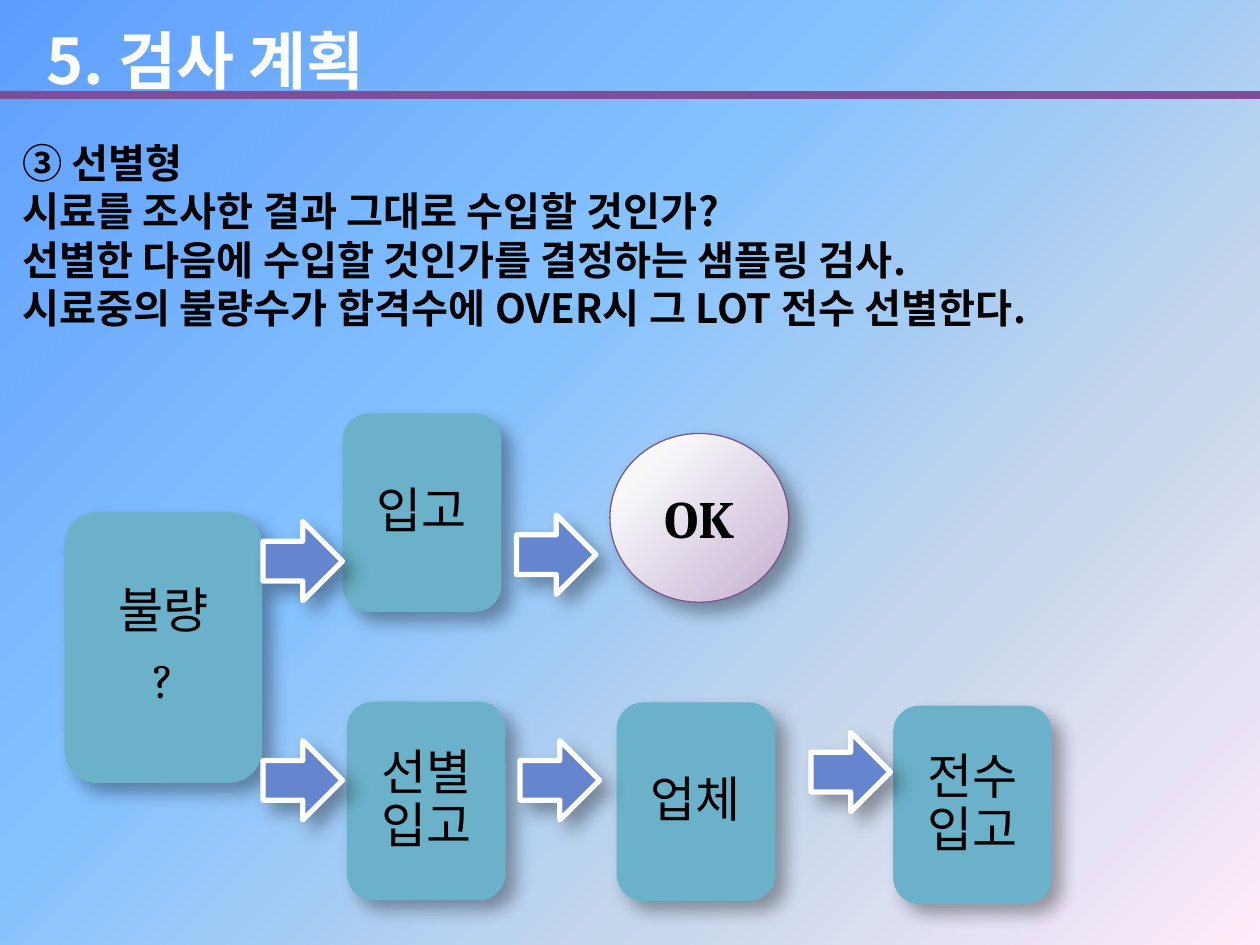
from dataclasses import dataclass

import pptx
import pptx.dml.color
import pptx.enum.shapes
import pptx.enum.text
import pptx.oxml
import pptx.oxml.ns
import pptx.util
from lxml import etree

Pt = pptx.util.Pt
ShapeKind = pptx.enum.shapes.MSO_SHAPE
NAMESPACE = pptx.oxml.ns.nsdecls("a")
SANS, SERIF = "Noto Sans CJK KR", "Cambria"
COLORS = {
    "title": "FFFFFF", "text": "000000", "rule": "7E4E99", "box": "6BB1C9",
    "arrow": "6585CF", "arrow_line": "FFFFFF", "circle_line": "77568A", "shadow": "000000",
}
BACKGROUND_STOPS = [(0, "5E9EFF"), (40, "85C2FF"), (70, "C4D6EB"), (100, "FFEBFA")]
CIRCLE_STOPS = [(20, "F8F7FA"), (100, "C5B0D2")]
LINEAR = '<a:lin ang="2700000" scaled="0"/>'
RADIAL = ('<a:path path="circle"><a:fillToRect l="-15000" t="-15000" '
          'r="115000" b="115000"/></a:path>')
BODY = [
    "③ 선별형",
    "시료를 조사한 결과 그대로 수입할 것인가?",
    "선별한 다음에 수입할 것인가를 결정하는 샘플링 검사.",
    "시료중의 불량수가 합격수에 OVER시 그 LOT 전수 선별한다.",
]


@dataclass
class Step:
    lines: list[str]
    left: float
    top: float
    width: float = 90.7
    height: float = 113.4


@dataclass
class Arrow:
    left: float
    top: float
    size: float = 45.4


STEPS = [
    Step(["불량", "?"], 36.8, 292.6, 113, 154.8),
    Step(["입고"], 195.8, 236.2),
    Step(["선별입고"], 198.2, 401),
    Step(["업체"], 352.4, 401.4),
    Step(["전수입고"], 510.4, 403.2),
]
ARROWS = [Arrow(150.3, 298), Arrow(150.3, 423.2), Arrow(297.2, 423.2),
          Arrow(463.4, 418.5), Arrow(295.2, 294.3)]


def rgb(name: str) -> pptx.dml.color.RGBColor:
    return pptx.dml.color.RGBColor.from_string(COLORS[name])


def set_gradient(properties, stops: list[tuple[int, str]], direction: str) -> None:
    """Replace a solid fill by a gradient with any number of stops."""
    stop_xml = "".join(f'<a:gs pos="{position * 1000}"><a:srgbClr val="{color}"/></a:gs>'
                       for position, color in stops)
    gradient = pptx.oxml.parse_xml(
        f'<a:gradFill {NAMESPACE} rotWithShape="1"><a:gsLst>{stop_xml}</a:gsLst>'
        f'{direction}</a:gradFill>')
    properties.replace(properties.find(pptx.oxml.ns.qn("a:solidFill")), gradient)


def add_shadow(shape) -> None:
    shape.shadow.inherit = False
    effects = shape._element.spPr.find(pptx.oxml.ns.qn("a:effectLst"))
    effects.append(pptx.oxml.parse_xml(
        f'<a:outerShdw {NAMESPACE} blurRad="{Pt(10.2)}" dist="{Pt(8)}" dir="2700000" '
        f'algn="tl" rotWithShape="0"><a:srgbClr val="{COLORS["shadow"]}">'
        '<a:alpha val="35000"/></a:srgbClr></a:outerShdw>'))


def add_lines(frame, lines: list[str], size: float, font: str,
              color: str = "text", bold: bool = False) -> None:
    frame.word_wrap = True
    for index, line in enumerate(lines):
        paragraph = frame.paragraphs[0] if index == 0 else frame.add_paragraph()
        run = paragraph.add_run()
        run.text = line
        run.font.size = Pt(size)
        run.font.name = font
        run.font.bold = bold
        run.font.color.rgb = rgb(color)
        east_asian = etree.SubElement(run.font._element, pptx.oxml.ns.qn("a:ea"))
        east_asian.set("typeface", SANS)


def add_text(slide, lines: list[str], left: float, top: float, width: float,
             height: float, size: float, color: str):
    frame = slide.shapes.add_textbox(Pt(left), Pt(top), Pt(width), Pt(height)).text_frame
    add_lines(frame, lines, size, SANS, color, bold=True)
    frame.auto_size = pptx.enum.text.MSO_AUTO_SIZE.SHAPE_TO_FIT_TEXT
    return frame


def add_figure(slide, kind, left: float, top: float, width: float, height: float,
               fill: str, line: str = "", line_width: float = 0):
    shape = slide.shapes.add_shape(kind, Pt(left), Pt(top), Pt(width), Pt(height))
    shape.fill.solid()
    shape.fill.fore_color.rgb = rgb(fill)
    if line:
        shape.line.color.rgb = rgb(line)
        shape.line.width = Pt(line_width)
    else:
        shape.line.fill.background()
    add_shadow(shape)
    return shape


def center_text(frame) -> None:
    frame.vertical_anchor = pptx.enum.text.MSO_ANCHOR.MIDDLE
    for paragraph in frame.paragraphs:
        paragraph.alignment = pptx.enum.text.PP_ALIGN.CENTER


def add_step(slide, step: Step) -> None:
    shape = add_figure(slide, ShapeKind.ROUNDED_RECTANGLE, step.left, step.top,
                       step.width, step.height, "box")
    frame = shape.text_frame
    frame.margin_left = frame.margin_right = Pt(8.4)
    frame.margin_top = frame.margin_bottom = Pt(8.4)
    add_lines(frame, step.lines, 28, SERIF)
    center_text(frame)
    for paragraph in frame.paragraphs:
        paragraph.line_spacing = 0.9
        paragraph.space_after = Pt(9.8)


def add_arrow(slide, arrow: Arrow) -> None:
    add_figure(slide, ShapeKind.RIGHT_ARROW, arrow.left, arrow.top, arrow.size,
               arrow.size, "arrow", "arrow_line", 3)


def main() -> None:
    presentation = pptx.Presentation()
    presentation.slide_width, presentation.slide_height = Pt(720), Pt(540)
    slide = presentation.slides.add_slide(presentation.slide_layouts[6])

    # Background
    slide.background.fill.solid()
    set_gradient(slide._element.find(".//" + pptx.oxml.ns.qn("p:bgPr")),
                 BACKGROUND_STOPS, LINEAR)

    # Title and rule
    add_text(slide, ["5. 검사 계획"], 19.4, 8.6, 221, 51, 36, "title")
    rule = slide.shapes.add_connector(pptx.enum.shapes.MSO_CONNECTOR.STRAIGHT,
                                      Pt(0), Pt(54.5), Pt(720), Pt(54.5))
    rule.line.color.rgb = rgb("rule")
    rule.line.width = Pt(4.5)
    etree.SubElement(rule._element.spPr, pptx.oxml.ns.qn("a:effectLst"))

    # Explanation with hanging indents
    body = add_text(slide, BODY, 5.8, 75.6, 703.4, 118.8, 23, "text")
    for paragraph in body.paragraphs:
        properties = paragraph._p.get_or_add_pPr()
        properties.set("marL", str(Pt(18)))
        properties.set("indent", str(Pt(-18)))

    # Accepted result
    circle = add_figure(slide, ShapeKind.OVAL, 348.5, 247.7, 102.2, 96.5,
                        "box", "circle_line", 0.75)
    set_gradient(circle._element.spPr, CIRCLE_STOPS, RADIAL)
    add_lines(circle.text_frame, ["OK"], 30, SERIF, bold=True)
    center_text(circle.text_frame)

    # Flow of the inspection
    for step in STEPS:
        add_step(slide, step)
    for arrow in ARROWS:
        add_arrow(slide, arrow)

    presentation.save("out.pptx")


if __name__ == "__main__":
    main()
